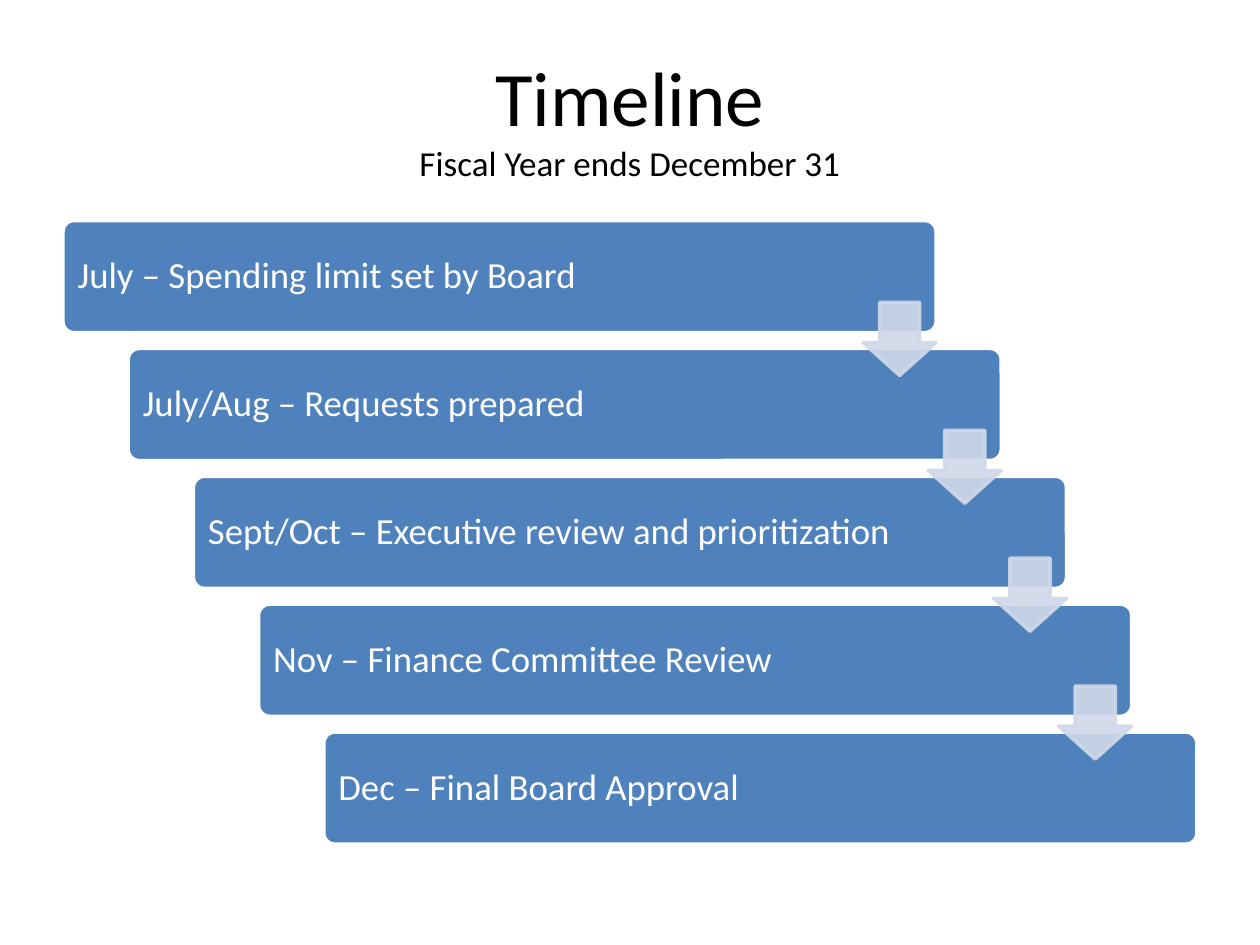
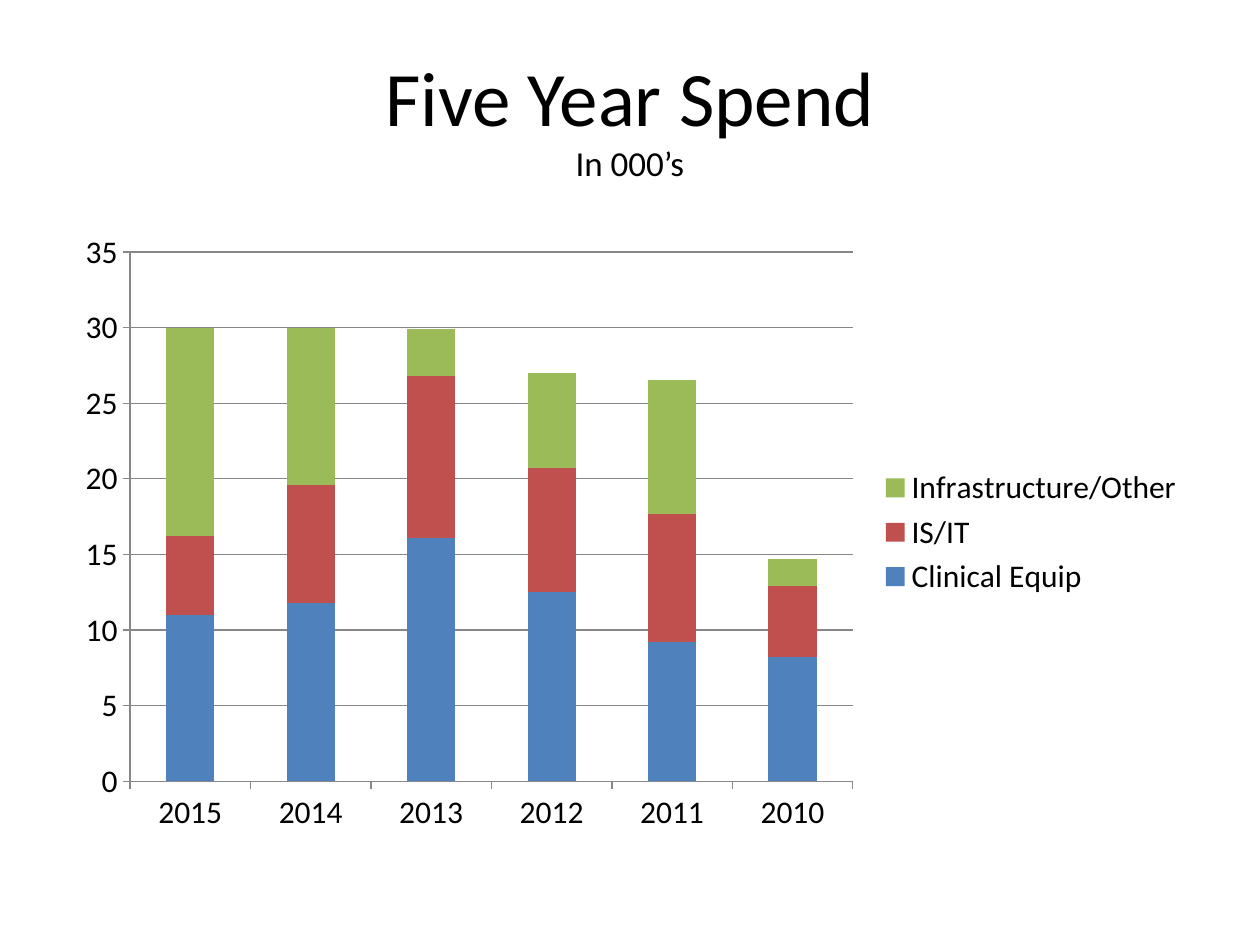
from lxml import etree
from pptx import Presentation
from pptx.chart.data import CategoryChartData
from pptx.dml.color import RGBColor
from pptx.enum.chart import XL_CHART_TYPE, XL_LEGEND_POSITION, XL_TICK_MARK
from pptx.enum.shapes import MSO_SHAPE
from pptx.enum.text import MSO_ANCHOR, PP_ALIGN
from pptx.oxml.ns import qn
from pptx.util import Inches, Pt

ROUNDED = MSO_SHAPE.ROUNDED_RECTANGLE
DOWN_ARROW = MSO_SHAPE.DOWN_ARROW
MIDDLE = MSO_ANCHOR.MIDDLE
LEFT, CENTER = PP_ALIGN.LEFT, PP_ALIGN.CENTER
STACKED = XL_CHART_TYPE.COLUMN_STACKED
LEGEND_RIGHT = XL_LEGEND_POSITION.RIGHT
TICK_OUTSIDE = XL_TICK_MARK.OUTSIDE

FONT = "Calibri"
BLACK = RGBColor(0x00, 0x00, 0x00)
WHITE = RGBColor(0xFF, 0xFF, 0xFF)
BLUE = RGBColor(0x4F, 0x81, 0xBD)
RED = RGBColor(0xC0, 0x50, 0x4D)
GREEN = RGBColor(0x9B, 0xBB, 0x59)
PALE_BLUE = RGBColor(0xD0, 0xD8, 0xE8)
GRAY = RGBColor(0x87, 0x87, 0x87)

MARGIN, CONTENT_TOP = 0.5, 1.75
CONTENT_WIDTH, CONTENT_HEIGHT = 9, 4.95
STEP_WIDTH, STEP_HEIGHT = 6.93, 0.89
ARROW_SIZE = 0.58

STEPS = [
    "July – Spending limit set by Board",
    "July/Aug – Requests prepared",
    "Sept/Oct – Executive review and prioritization",
    "Nov – Finance Committee Review",
    "Dec – Final Board Approval",
]
YEARS = ["2015", "2014", "2013", "2012", "2011", "2010"]
SPENDING = [
    ("Clinical Equip", BLUE, [11, 11.8, 16.1, 12.5, 9.2, 8.2]),
    ("IS/IT", RED, [5.2, 7.8, 10.7, 8.2, 8.5, 4.7]),
    ("Infrastructure/Other", GREEN, [13.8, 10.4, 3.1, 6.3, 8.8, 1.8]),
]


def style_font(font, size, color):
    font.name = FONT
    font.size = Pt(size)
    font.color.rgb = color


def add_run(paragraph, text, size, color):
    run = paragraph.add_run()
    run.text = text
    style_font(run.font, size, color)


def add_title(slide, title, subtitle):
    box = slide.shapes.add_textbox(
        Inches(MARGIN), Inches(0.3), Inches(CONTENT_WIDTH), Inches(1.25))
    frame = box.text_frame
    frame.word_wrap = True
    frame.vertical_anchor = MIDDLE
    paragraph = frame.paragraphs[0]
    paragraph.alignment = CENTER
    add_run(paragraph, title, 44, BLACK)
    paragraph.add_line_break()
    add_run(paragraph, subtitle, 20, BLACK)


def add_filled_shape(slide, kind, left, top, width, height, fill, line):
    shape = slide.shapes.add_shape(
        kind, Inches(left), Inches(top), Inches(width), Inches(height))
    shape.shadow.inherit = False
    shape.fill.solid()
    shape.fill.fore_color.rgb = fill
    shape.line.color.rgb = line
    shape.line.width = Pt(2)
    return shape


def add_step(slide, left, top, text):
    shape = add_filled_shape(
        slide, ROUNDED, left, top, STEP_WIDTH, STEP_HEIGHT, BLUE, WHITE)
    shape.adjustments[0] = 0.1
    frame = shape.text_frame
    frame.word_wrap = True
    frame.vertical_anchor = MIDDLE
    frame.margin_left = Inches(0.09)
    paragraph = frame.paragraphs[0]
    paragraph.alignment = LEFT
    paragraph.line_spacing = 0.9
    add_run(paragraph, text, 21, WHITE)


def add_arrow(slide, left, top):
    shape = add_filled_shape(
        slide, DOWN_ARROW, left, top, ARROW_SIZE, ARROW_SIZE, PALE_BLUE, PALE_BLUE)
    shape.adjustments[0] = 0.55
    shape.adjustments[1] = 0.45
    for color in shape._element.spPr.iter(qn("a:srgbClr")):
        etree.SubElement(color, qn("a:alpha"), val="90000")


def add_timeline(slide):
    last = len(STEPS) - 1
    step_x = (CONTENT_WIDTH - STEP_WIDTH) / last
    step_y = (CONTENT_HEIGHT - STEP_HEIGHT) / last
    places = [(MARGIN + i * step_x, CONTENT_TOP + i * step_y)
              for i in range(len(STEPS))]
    for (left, top), text in zip(places, STEPS):
        add_step(slide, left, top, text)
    for left, top in places[:-1]:
        add_arrow(slide, left + STEP_WIDTH - ARROW_SIZE, top + 0.65)


def style_axis(axis):
    axis.major_tick_mark = TICK_OUTSIDE
    axis.format.line.color.rgb = GRAY
    style_font(axis.tick_labels.font, 18, BLACK)


def add_spending_chart(slide):
    data = CategoryChartData()
    data.categories = YEARS
    for name, _, values in SPENDING:
        data.add_series(name, values)
    chart = slide.shapes.add_chart(
        STACKED, Inches(MARGIN), Inches(CONTENT_TOP),
        Inches(CONTENT_WIDTH), Inches(CONTENT_HEIGHT), data).chart
    style_font(chart.font, 18, BLACK)
    chart.has_title = False
    chart.has_legend = True
    chart.legend.position = LEGEND_RIGHT
    chart.legend.include_in_layout = False
    style_axis(chart.category_axis)
    style_axis(chart.value_axis)
    chart.value_axis.has_major_gridlines = True
    chart.value_axis.major_gridlines.format.line.color.rgb = GRAY
    plot = chart.plots[0]
    plot.gap_width = 150
    plot.overlap = 100
    plot.vary_by_categories = False
    for series, (_, color, _) in zip(plot.series, SPENDING):
        series.format.fill.solid()
        series.format.fill.fore_color.rgb = color


def main():
    presentation = Presentation()
    presentation.slide_width = Inches(10)
    presentation.slide_height = Inches(7.5)
    blank = presentation.slide_layouts[6]

    slide = presentation.slides.add_slide(blank)
    add_title(slide, "Timeline", "Fiscal Year ends December 31")
    add_timeline(slide)

    slide = presentation.slides.add_slide(blank)
    add_title(slide, "Five Year Spend", "In 000’s")
    add_spending_chart(slide)

    presentation.save("out.pptx")


if __name__ == "__main__":
    main()
